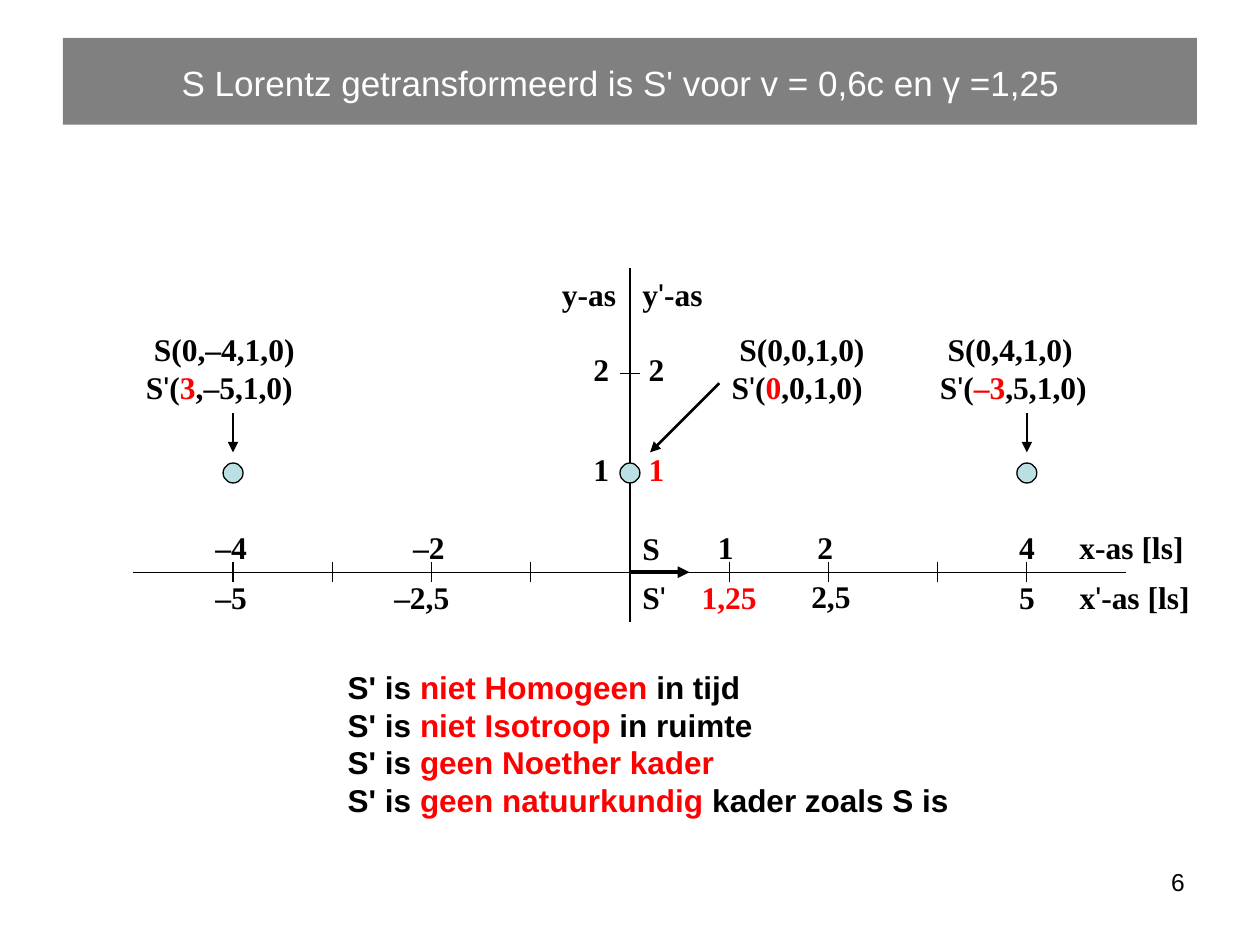
from lxml.etree import SubElement
from pptx import Presentation
from pptx.dml.color import RGBColor
from pptx.enum.shapes import MSO_CONNECTOR as Connector, MSO_SHAPE as Shape
from pptx.enum.text import MSO_ANCHOR as Anchor, MSO_AUTO_SIZE as AutoSize, PP_ALIGN as Align
from pptx.oxml.ns import qn
from pptx.util import Pt

BLACK, RED = "000000", "FF0000"
color = RGBColor.from_string
X0, Y0, UNIT = 360, 327, 56.7  # origin and length of one light second


def write(frame, lines, face):
    """Fill a frame with bold lines; *stars* enclose red text."""
    for i, line in enumerate(lines):
        paragraph = frame.paragraphs[0] if i == 0 else frame.add_paragraph()
        paragraph.alignment = Align.LEFT
        paragraph.space_before = Pt(0)
        paragraph.font.name, paragraph.font.size = face, Pt(18)
        paragraph.font.bold = True
        paragraph.font.color.rgb = color(BLACK)
        for j, part in enumerate(line.split("*")):
            for piece in part.replace("'", "|'|").split("|"):
                if not piece:
                    continue
                run = paragraph.add_run()
                run.text = piece
                if j % 2:
                    run.font.color.rgb = color(RED)
                if piece == "'" and face != "Arial":
                    run.font.name, run.font.bold = "Arial", False


def draw_line(x1, y1, x2, y2, width=0.75, arrow=False):
    line = slide.shapes.add_connector(Connector.STRAIGHT, Pt(x1), Pt(y1), Pt(x2), Pt(y2))
    line.line.color.rgb = color(BLACK)
    line.line.width = Pt(width)
    properties = line._element.spPr
    if arrow:
        SubElement(properties.find(qn("a:ln")), qn("a:tailEnd"), type="triangle")
    SubElement(properties, qn("a:effectLst"))


prs = Presentation()
prs.slide_width, prs.slide_height = Pt(720), Pt(540)
slide = prs.slides.add_slide(prs.slide_layouts[1])
title, conclusions = slide.placeholders

# Title on its grey band
band = slide.shapes.add_shape(Shape.RECTANGLE, Pt(36), Pt(21.6), Pt(648), Pt(49.7))
band.shadow.inherit = False
band.fill.solid()
band.fill.fore_color.rgb = color("808080")
band.line.fill.background()

slide.shapes._spTree.append(title._element)  # in front of the band
title.left, title.top, title.width, title.height = Pt(39.6), Pt(31.7), Pt(641.5), Pt(31)
title.text_frame.text = "S Lorentz getransformeerd is S' voor v = 0,6c en γ =1,25"
title.text_frame.auto_size = AutoSize.NONE
title.text_frame.margin_right = Pt(18.5)
heading = title.text_frame.paragraphs[0]
heading.alignment = Align.CENTER
heading.font.name, heading.font.size = "Arial", Pt(20)
heading.font.color.rgb = color("FFFFFF")

# Conclusions
conclusions.left, conclusions.top = Pt(191.5), Pt(378)
conclusions.width, conclusions.height = Pt(361.5), Pt(94.3)
conclusions.text_frame.auto_size = AutoSize.NONE
conclusions.text_frame.vertical_anchor = Anchor.TOP
write(conclusions.text_frame, [
    "S' is *niet Homogeen *in tijd",
    "S' is *niet Isotroop *in ruimte",
    "S' is *geen Noether kader*",
    "S' is *geen natuurkundig *kader zoals S is",
], "Arial")
for paragraph in conclusions.text_frame.paragraphs:
    indents = paragraph._p.get_or_add_pPr()
    indents.set("marL", "0")
    indents.set("indent", "0")
    indents.insert_element_before(indents.makeelement(qn("a:buNone")), "a:tabLst", "a:defRPr")

# Axes, ticks and velocity arrow
draw_line(76.3, Y0, 643.7, Y0)
draw_line(X0, 153.4, X0, 355.7)
for n in (-4, -3, -2, -1, 1, 2, 3.1, 4):
    draw_line(X0 + n * UNIT, Y0 - 5.7, X0 + n * UNIT, Y0 + 5.7)
draw_line(X0 - 5.7, Y0 - 2 * UNIT, X0 + 5.7, Y0 - 2 * UNIT)
draw_line(X0, Y0, X0 + 34, Y0, 2.25, arrow=True)

# Events and the arrows that point at them
for n in (-4, 0, 4):
    event = slide.shapes.add_shape(Shape.OVAL, Pt(X0 + n * UNIT - 5.7), Pt(Y0 - UNIT - 5.7),
                                   Pt(11.4), Pt(11.4))
    event.shadow.inherit = False
    event.fill.solid()
    event.fill.fore_color.rgb = color("BBE0E3")
    event.line.color.rgb = color(BLACK)
    event.line.width = Pt(0.75)
    start = (411, 219) if n == 0 else (X0 + n * UNIT, 236)
    tip = 371.5 if n == 0 else X0 + n * UNIT
    draw_line(*start, tip, 258.5, 1.5, arrow=True)

# Labels: left, top, width, lines
ABOVE, BELOW, EVENTS = 298, 327, 185
labels = [
    (314, 153.4, 46, ["y-as"]), (360, 153.4, 49, ["y'-as"]),
    (332, 196.6, 23.8, ["2"]), (363.6, 196.6, 23.8, ["2"]),
    (332, 253.4, 23.8, ["1"]), (363.6, 253.4, 23.8, ["*1*"]),
    (116, ABOVE, 32.4, ["–4"]), (116, BELOW, 32.4, ["–5"]),
    (229, ABOVE, 32.4, ["–2"]), (218.2, BELOW, 46, ["–2,5"]),
    (360, ABOVE + 0.8, 23.8, ["S"]), (360, BELOW, 28, ["S'"]),
    (403.2, ABOVE, 23.8, ["1"]), (393.8, BELOW, 46, ["*1,25*"]),
    (460, ABOVE, 23.8, ["2"]), (456.5, BELOW - 0.8, 37.4, ["2,5"]),
    (575.3, ABOVE, 23.8, ["4"]), (575.3, BELOW, 23.8, ["5"]),
    (609.8, ABOVE, 75, ["x-as [ls]"]), (609.8, BELOW, 77.8, ["x'-as [ls]"]),
    (76.3, EVENTS, 101.5, [" S(0,–4,1,0)", "S'(*3*,–5,1,0)"]),
    (411, EVENTS, 90.7, [" S(0,0,1,0)", "S'(*0*,0,1,0)"]),
    (530, EVENTS, 100, [" S(0,4,1,0)", "S'(*–3*,5,1,0)"]),
]
for left, top, width, lines in labels:
    label = slide.shapes.add_textbox(Pt(left), Pt(top), Pt(width), Pt(7.2 + 21.8 * len(lines)))
    label.text_frame.word_wrap = False
    write(label.text_frame, lines, "Times New Roman")

# Page number
page = slide.shapes.add_textbox(Pt(516), Pt(492), Pt(168), Pt(37.5))
page.text_frame.word_wrap = True
page.text_frame.text = "6"
number = page.text_frame.paragraphs[0]
number.alignment = Align.RIGHT
number.font.name, number.font.size = "Arial", Pt(14)
number.font.color.rgb = color(BLACK)

prs.save("out.pptx")
